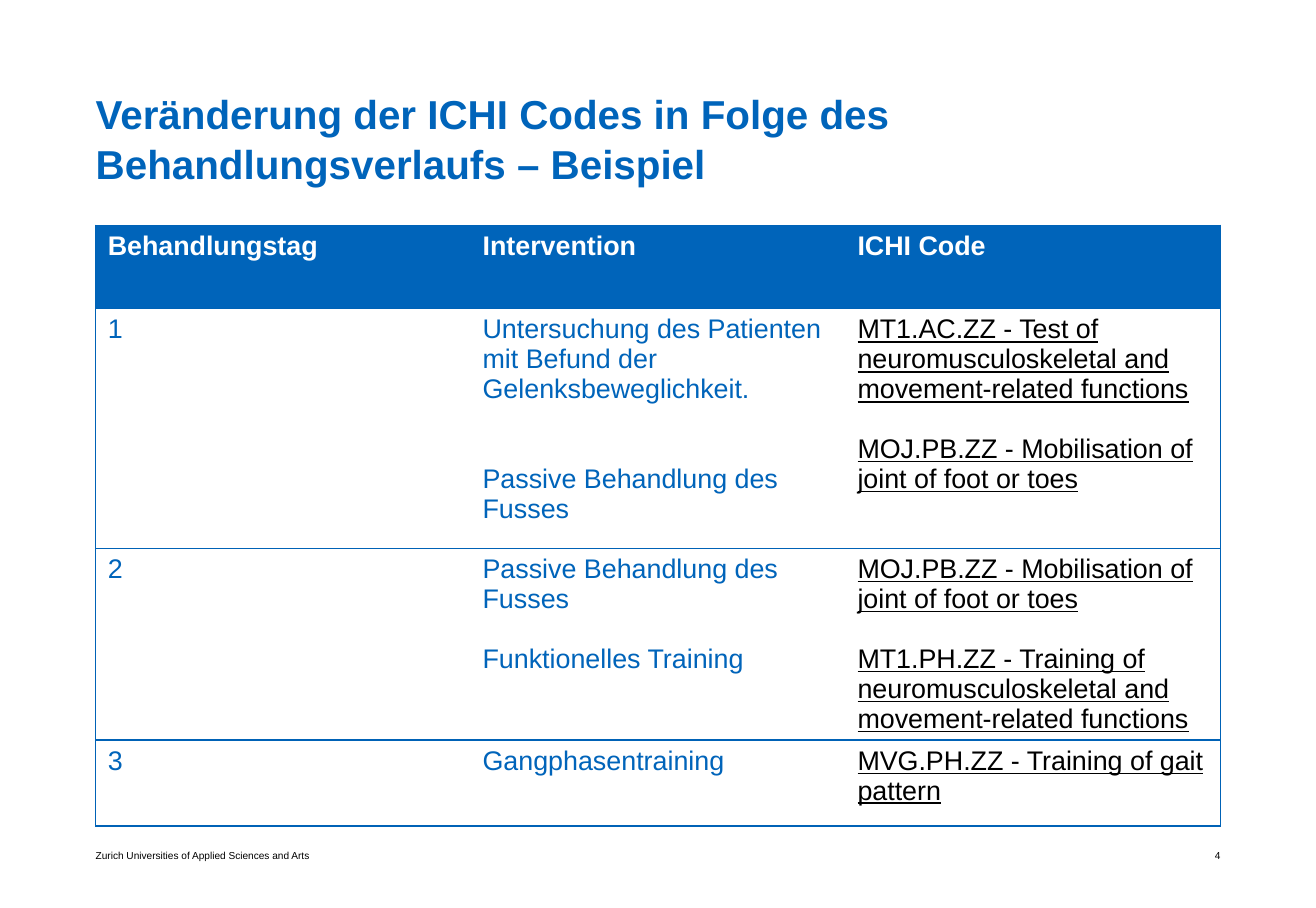
from dataclasses import dataclass

from lxml.etree import SubElement
from pptx import Presentation
from pptx.dml.color import RGBColor
from pptx.enum.text import MSO_ANCHOR, MSO_AUTO_SIZE, PP_ALIGN
from pptx.oxml.ns import qn
from pptx.util import Inches, Pt


@dataclass(frozen=True)
class Theme:
    font: str = "Arial"
    blue: str = "0064BA"
    border: str = "0062B6"
    white: str = "FFFFFF"
    black: str = "000000"
    title_size: int = 24
    title_line: int = 30
    table_size: int = 16
    footer_size: int = 6
    text_line: float = 17.9
    border_width: float = 0.75


THEME = Theme()
LEFT, WIDTH = 0.79, 9.29
ROW_HEIGHTS = (0.69, 1.98, 1.58, 0.71)
HEADINGS = ("Behandlungstag", "Intervention", "ICHI Code")
MOBILISATION = "MOJ.PB.ZZ - Mobilisation of joint of foot or toes"
PASSIVE = "Passive Behandlung des Fusses"

# Each day: interventions, codes and the empty lines between entries.
DAYS = (
    (("Untersuchung des Patienten mit Befund der Gelenksbeweglichkeit.", PASSIVE), 2,
     ("MT1.AC.ZZ - Test of neuromusculoskeletal and movement-related functions",
      MOBILISATION), 1),
    ((PASSIVE, "Funktionelles Training"), 1,
     (MOBILISATION,
      "MT1.PH.ZZ - Training of neuromusculoskeletal and movement-related functions"), 1),
    (("Gangphasentraining",), 0, ("MVG.PH.ZZ - Training of gait pattern",), 0),
)


def style_font(para, size, color, bold=False, underline=False):
    font = para.font
    font.name, font.size = THEME.font, Pt(size)
    font.bold, font.underline = bold, underline
    font.color.rgb = RGBColor.from_string(color)


def clear_margins(frame):
    frame.margin_left = frame.margin_right = frame.margin_top = frame.margin_bottom = 0
    frame.word_wrap = True
    frame.auto_size = MSO_AUTO_SIZE.NONE
    frame.vertical_anchor = MSO_ANCHOR.TOP


def add_title(page, left, top, width, height):
    title = page.shapes.title
    title.left, title.top = Inches(left), Inches(top)
    title.width, title.height = Inches(width), Inches(height)
    frame = title.text_frame
    clear_margins(frame)
    frame.text = "Veränderung der ICHI Codes in Folge des Behandlungsverlaufs – Beispiel"
    para = frame.paragraphs[0]
    para.alignment = PP_ALIGN.LEFT
    para.line_spacing = Pt(THEME.title_line)
    style_font(para, THEME.title_size, THEME.blue, bold=True)


def set_borders(cell, visible):
    """Draw the named sides and blank the others; call before setting the fill."""
    properties = cell._tc.get_or_add_tcPr()
    for side in "LRTB":
        line = SubElement(properties, qn(f"a:ln{side}"), w=str(Pt(THEME.border_width)))
        if side in visible:
            fill = SubElement(line, qn("a:solidFill"))
            SubElement(fill, qn("a:srgbClr"), val=THEME.border)
        else:
            SubElement(line, qn("a:noFill"))


def fill_cell(cell, entries, gap, color, bold=False, underline=False):
    frame = cell.text_frame
    for index, entry in enumerate(entries):
        para = frame.add_paragraph() if index else frame.paragraphs[0]
        para.text = entry
        if index:
            para.space_before = Pt(gap * THEME.text_line)
        style_font(para, THEME.table_size, color, bold, underline)


def add_treatment_table(page, left, top, width):
    rows, columns = len(ROW_HEIGHTS), len(HEADINGS)
    table = page.shapes.add_table(
        rows, columns, Inches(left), Inches(top),
        Inches(width), Inches(sum(ROW_HEIGHTS))).table
    for column in table.columns:
        column.width = Inches(width / columns)
    for row, height in zip(table.rows, ROW_HEIGHTS):
        row.height = Inches(height)

    for row in range(rows):
        for column in range(columns):
            cell = table.cell(row, column)
            sides = {0: "LTB", columns - 1: "RTB"}.get(column, "TB")
            set_borders(cell, sides)
            if row == 0:
                cell.fill.solid()
                cell.fill.fore_color.rgb = RGBColor.from_string(THEME.blue)
            else:
                cell.fill.background()

    for column, heading in enumerate(HEADINGS):
        fill_cell(table.cell(0, column), [heading], 0, THEME.white, bold=True)
    for day, (interventions, gap, codes, code_gap) in enumerate(DAYS, start=1):
        fill_cell(table.cell(day, 0), [str(day)], 0, THEME.blue)
        fill_cell(table.cell(day, 1), interventions, gap, THEME.blue)
        fill_cell(table.cell(day, 2), codes, code_gap, THEME.black, underline=True)


def add_footer(page, left, top, width, height):
    part_width = 4.49
    parts = (
        ("Zurich Universities of Applied Sciences and Arts", left, PP_ALIGN.LEFT),
        ("4", left + width - part_width, PP_ALIGN.RIGHT),
    )
    for text, part_left, alignment in parts:
        box = page.shapes.add_textbox(
            Inches(part_left), Inches(top), Inches(part_width), Inches(height))
        clear_margins(box.text_frame)
        para = box.text_frame.paragraphs[0]
        para.text = text
        para.alignment = alignment
        style_font(para, THEME.footer_size, THEME.black)


def main():
    deck = Presentation()
    deck.slide_width, deck.slide_height = Inches(10.87), Inches(7.5)
    page = deck.slides.add_slide(deck.slide_layouts[5])
    add_title(page, LEFT, 0.72, 7.76, 0.87)
    add_treatment_table(page, LEFT, 1.86, WIDTH)
    add_footer(page, LEFT, 7.02, WIDTH, 0.2)
    deck.save("out.pptx")


if __name__ == "__main__":
    main()
